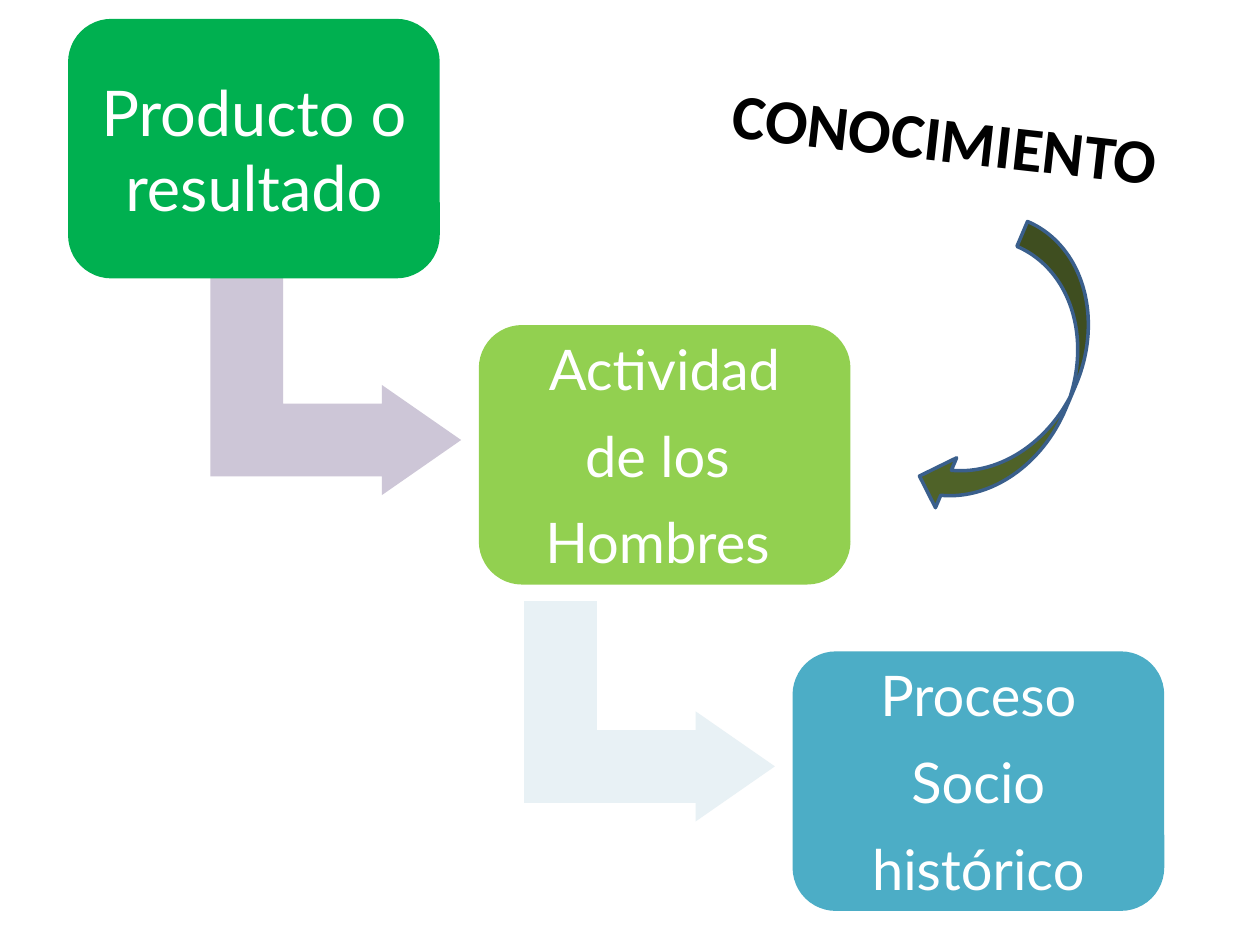
from dataclasses import dataclass

from pptx import Presentation
from pptx.dml.color import RGBColor
from pptx.enum.shapes import MSO_SHAPE
from pptx.enum.text import MSO_ANCHOR, PP_ALIGN
from pptx.util import Inches, Pt

ROUNDED = MSO_SHAPE.ROUNDED_RECTANGLE
BENT_ARROW = MSO_SHAPE.BENT_UP_ARROW
CURVED_ARROW = MSO_SHAPE.CURVED_LEFT_ARROW
MIDDLE = MSO_ANCHOR.MIDDLE
CENTER = PP_ALIGN.CENTER

WHITE = RGBColor(0xFF, 0xFF, 0xFF)
BLACK = RGBColor(0x00, 0x00, 0x00)
GREEN = RGBColor(0x00, 0xB0, 0x50)
LIME = RGBColor(0x92, 0xD0, 0x50)
TEAL = RGBColor(0x4C, 0xAD, 0xC6)
LILAC = RGBColor(0xCD, 0xC6, 0xD7)
PALE_BLUE = RGBColor(0xE8, 0xF1, 0xF5)
OLIVE = RGBColor(0x4F, 0x62, 0x28)
NAVY = RGBColor(0x3A, 0x5F, 0x8C)

SPACE_AFTER = 0.35


@dataclass(frozen=True)
class Step:
    left: float
    top: float
    color: RGBColor
    lines: tuple[str, ...]
    size: int
    inset: float


@dataclass(frozen=True)
class Bend:
    left: float
    top: float
    color: RGBColor


STEPS = (
    Step(0.54, 0.15, GREEN, ("Producto o resultado",), 36, 0.05),
    Step(3.8, 2.58, LIME, ("Actividad", "de los ", "Hombres "), 32, 0.03),
    Step(6.29, 5.17, TEAL, ("Proceso", "Socio", "histórico"), 32, 0.03),
)
BENDS = (Bend(1.79, 2.06, LILAC), Bend(4.28, 4.65, PALE_BLUE))


def add_filled(s, kind, box: tuple[float, ...], color: RGBColor, rotation: float = 0):
    """Add a preset shape with a solid fill and no outline."""
    sp = s.shapes.add_shape(kind, *map(Inches, box))
    sp.shadow.inherit = False
    sp.fill.solid()
    sp.fill.fore_color.rgb = color
    sp.line.fill.background()
    sp.rotation = rotation
    return sp


def format_run(r, color: RGBColor, **formats) -> None:
    """Apply font values and a colour to a run."""
    for name, value in formats.items():
        setattr(r.font, name, value)
    r.font.color.rgb = color


def add_step(s, step: Step) -> None:
    """Draw a rounded box with its centred lines."""
    sp = add_filled(s, ROUNDED, (step.left, step.top, 2.95, 2.06), step.color)
    tf = sp.text_frame
    tf.word_wrap = True
    tf.vertical_anchor = MIDDLE
    for side in ("left", "top", "right", "bottom"):
        setattr(tf, f"margin_{side}", Inches(step.inset))
    for i, line in enumerate(step.lines):
        p = tf.add_paragraph() if i else tf.paragraphs[0]
        p.alignment = CENTER
        p.space_after = Pt(step.size * SPACE_AFTER)
        r = p.add_run()
        r.text = line
        format_run(r, WHITE, name="Lato", size=Pt(step.size))


def add_bend(s, bend: Bend) -> None:
    """Draw a bent arrow that leads down and right to the next step."""
    sp = add_filled(s, BENT_ARROW, (bend.left, bend.top, 1.75, 1.99), bend.color, 90)
    for i, value in enumerate((0.33, 0.25, 0.36)):
        sp.adjustments[i] = value


def add_title(s) -> None:
    """Write the tilted heading."""
    sp = s.shapes.add_textbox(*map(Inches, (5.71, 0.76, 4.03, 0.71)))
    sp.rotation = 6.4
    tf = sp.text_frame
    tf.word_wrap = True
    r = tf.paragraphs[0].add_run()
    r.text = "CONOCIMIENTO"
    format_run(r, BLACK, name="Calibri", size=Pt(36), bold=True)


def add_curved_arrow(s) -> None:
    """Draw the outlined arrow from the heading to the middle step."""
    sp = add_filled(s, CURVED_ARROW, (7.65, 1.83, 0.86, 2.41), OLIVE, 23)
    sp.line.color.rgb = NAVY
    sp.line.width = Pt(2)


def main() -> None:
    """Build the slide and save it."""
    prs = Presentation()
    prs.slide_width, prs.slide_height = Inches(10), Inches(7.5)
    s = prs.slides.add_slide(prs.slide_layouts[6])
    for bend in BENDS:
        add_bend(s, bend)
    for step in STEPS:
        add_step(s, step)
    add_title(s)
    add_curved_arrow(s)
    prs.save("out.pptx")


if __name__ == "__main__":
    main()
